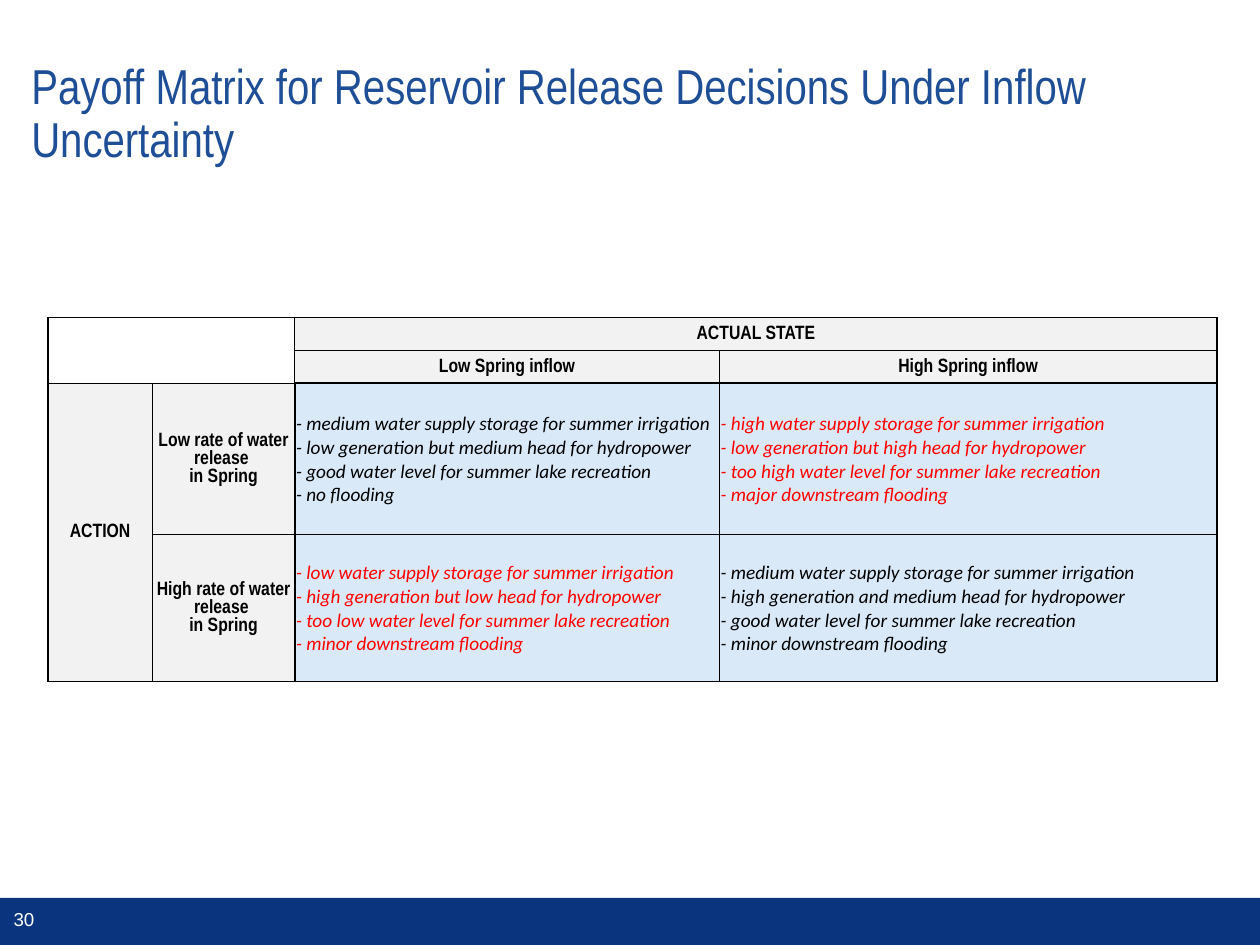
from copy import deepcopy

from lxml.etree import SubElement
from pptx import Presentation
from pptx.dml.color import RGBColor
from pptx.enum.shapes import MSO_SHAPE
from pptx.enum.text import MSO_ANCHOR, PP_ALIGN
from pptx.oxml.ns import qn
from pptx.util import Inches, Pt

WIDE, HIGH = Inches(10), Inches(7.5)
COLS = [0.83, 1.13, 3.37, 3.95]
ROWS = [0.26, 0.26, 1.2, 1.16]
BLACK, RED, WHITE = "000000", "FF0000", "FFFFFF"
GREY, PALE, NAVY, BLUE = "F2F2F2", "DAE9F8", "0A357E", "1E4E96"

HEAD = {"name": "Arial Narrow", "size": Pt(11), "bold": True}
NOTE = {"name": "Calibri", "size": Pt(11), "italic": True}
TITLE = {"name": "Arial Narrow", "size": Pt(28)}
PAGE = {"name": "Arial", "size": Pt(10.7)}
MID = {"alignment": PP_ALIGN.CENTER}
LEFT = {"alignment": PP_ALIGN.LEFT}
INSET = {
    "margin_left": Inches(0.01), "margin_right": Inches(0.01),
    "margin_top": Inches(0.01), "margin_bottom": 0,
    "vertical_anchor": MSO_ANCHOR.MIDDLE,
}

HEADS = {
    (0, 2): "ACTUAL STATE",
    (1, 2): "Low Spring inflow",
    (1, 3): "High Spring inflow",
    (2, 0): "ACTION",
    (2, 1): "Low rate of water release \vin Spring",
    (3, 1): "High rate of water release \vin Spring",
}
NOTES = {
    (2, 2): (BLACK, [
        "medium water supply storage for summer irrigation",
        "low generation but medium head for hydropower",
        "good water level for summer lake recreation",
        "no flooding"]),
    (2, 3): (RED, [
        "high water supply storage for summer irrigation",
        "low generation but high head for hydropower",
        "too high water level for summer lake recreation",
        "major downstream flooding"]),
    (3, 2): (RED, [
        "low water supply storage for summer irrigation",
        "high generation but low head for hydropower",
        "too low water level for summer lake recreation",
        "minor downstream flooding"]),
    (3, 3): (BLACK, [
        "medium water supply storage for summer irrigation",
        "high generation and medium head for hydropower",
        "good water level for summer lake recreation",
        "minor downstream flooding"]),
}


def tint(code):
    return RGBColor.from_string(code)


def apply(item, form):
    for key, value in form.items():
        setattr(item, key, value)


def share(left, top, width, height):
    return (round(left * WIDE), round(top * HIGH),
            round(width * WIDE), round(height * HIGH))


def write(para, text, font, color, form):
    para.text = text
    apply(para, form)
    for run in para.runs:
        apply(run.font, font)
        run.font.color.rgb = tint(color)
    for mark in para._p.findall(qn("a:br")):
        mark.append(deepcopy(para.runs[0]._r.rPr))


def label(slide, box, text, font, color, form, frame):
    body = slide.shapes.add_textbox(*box).text_frame
    apply(body, {"vertical_anchor": MSO_ANCHOR.MIDDLE, **frame})
    write(body.paragraphs[0], text, font, color, form)


def footer(slide, box):
    left, top, width, height = box
    bar = slide.shapes.add_shape(MSO_SHAPE.RECTANGLE, *box)
    bar.shadow.inherit = False
    bar.fill.solid()
    bar.fill.fore_color.rgb = tint(NAVY)
    bar.line.fill.background()
    spot = left, top, round(width * 0.038), round(height * 0.9)
    label(slide, spot, "30", PAGE, WHITE, MID, {"word_wrap": True})


def edge(at, cross):
    if at in (0, 4) or (at == 2 and cross >= 2):
        return 1
    return 0 if at == 1 and cross < 2 else 0.5


def rule(cell, row, col):
    sides = {
        "a:lnL": edge(col, row),
        "a:lnR": edge(col + cell.span_width, row),
        "a:lnT": edge(row, col),
        "a:lnB": edge(row + cell.span_height, col),
    }
    props = cell._tc.get_or_add_tcPr()
    for tag, width in sides.items():
        line = SubElement(props, qn(tag), w=str(Pt(width)))
        if width:
            fill = SubElement(line, qn("a:solidFill"))
            SubElement(fill, qn("a:srgbClr"), val=BLACK)
        else:
            SubElement(line, qn("a:noFill"))


def fill_cell(cell, row, col):
    apply(cell, INSET)
    if not cell.is_spanned:
        rule(cell, row, col)
    para = cell.text_frame.paragraphs[0]
    back = GREY
    if (row, col) in HEADS:
        write(para, HEADS[row, col], HEAD, BLACK, MID)
    elif (row, col) in NOTES:
        color, lines = NOTES[row, col]
        text = "\v".join(f"- {line}" for line in lines)
        write(para, text, NOTE, color, LEFT)
        back = PALE
    else:
        SubElement(para._p, qn("a:endParaRPr"), sz="1100")
        if row < 2 and col < 2:
            back = WHITE
    cell.fill.solid()
    cell.fill.fore_color.rgb = tint(back)


def matrix(slide, box):
    grid = slide.shapes.add_table(len(ROWS), len(COLS), *box).table
    apply(grid, {"first_row": False, "horz_banding": False})
    for col, size in zip(grid.columns, COLS):
        col.width = round(box[2] * size / sum(COLS))
    for row, size in zip(grid.rows, ROWS):
        row.height = round(box[3] * size / sum(ROWS))
    grid.cell(0, 2).merge(grid.cell(0, 3))
    grid.cell(2, 0).merge(grid.cell(3, 0))
    for row in range(len(ROWS)):
        for col in range(len(COLS)):
            fill_cell(grid.cell(row, col), row, col)


def main():
    deck = Presentation()
    apply(deck, {"slide_width": WIDE, "slide_height": HIGH})
    slide = deck.slides.add_slide(deck.slide_layouts[6])
    footer(slide, share(0, 0.95, 1, 0.05))
    frame = {
        "word_wrap": True, "margin_left": Inches(0.1),
        "margin_right": Inches(0.2), "margin_top": Inches(0.1),
        "margin_bottom": Inches(0.1),
    }
    label(slide, share(0.015, 0.027, 0.967, 0.19),
          "Payoff Matrix for Reservoir Release Decisions Under Inflow Uncertainty",
          TITLE, BLUE, {"line_spacing": 0.9}, frame)
    matrix(slide, share(0.038, 0.336, 0.928, 0.385))
    deck.save("out.pptx")


if __name__ == "__main__":
    main()
